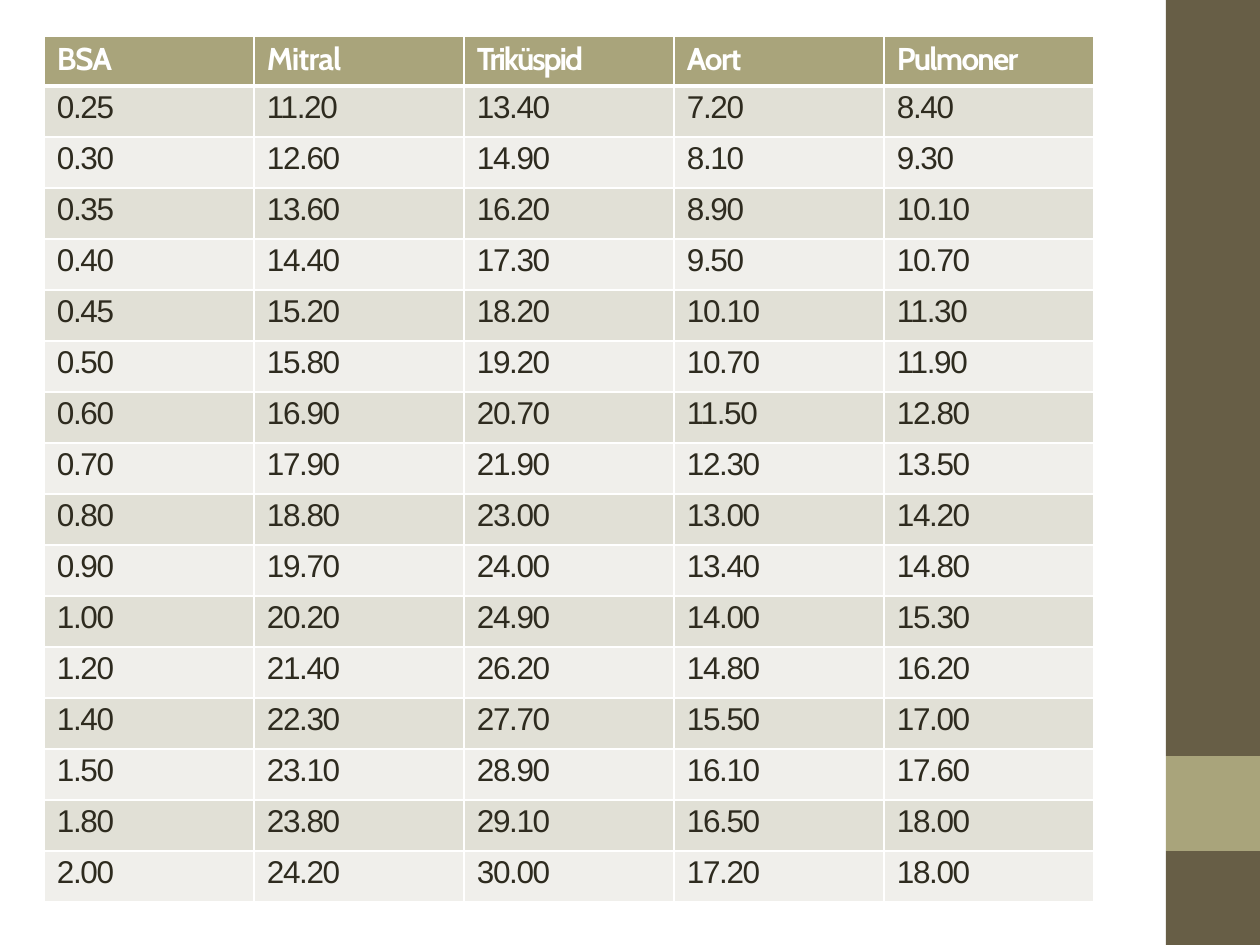
"""Build a slide with a table of valve diameters by body surface area."""
from lxml.etree import SubElement
from pptx import Presentation
from pptx.dml.color import RGBColor
from pptx.enum.shapes import MSO_SHAPE as Shape
from pptx.oxml.ns import qn
from pptx.util import Emu, Pt

SCALE = 914400 / 126
WHITE, OLIVE, SAND, INK = "FFFFFF", "675E46", "A9A47B", "2E2B1F"
BANDS = ("E1E0D6", "F0EFEB")

HEADERS = [("BSA", -0.7), ("Mitral", -0.5), ("Triküspid", -1.2), ("Aort", -0.8), ("Pulmoner", -1)]
ROWS = [
    ("0.25", "11.20", "13.40", "7.20", "8.40"),
    ("0.30", "12.60", "14.90", "8.10", "9.30"),
    ("0.35", "13.60", "16.20", "8.90", "10.10"),
    ("0.40", "14.40", "17.30", "9.50", "10.70"),
    ("0.45", "15.20", "18.20", "10.10", "11.30"),
    ("0.50", "15.80", "19.20", "10.70", "11.90"),
    ("0.60", "16.90", "20.70", "11.50", "12.80"),
    ("0.70", "17.90", "21.90", "12.30", "13.50"),
    ("0.80", "18.80", "23.00", "13.00", "14.20"),
    ("0.90", "19.70", "24.00", "13.40", "14.80"),
    ("1.00", "20.20", "24.90", "14.00", "15.30"),
    ("1.20", "21.40", "26.20", "14.80", "16.20"),
    ("1.40", "22.30", "27.70", "15.50", "17.00"),
    ("1.50", "23.10", "28.90", "16.10", "17.60"),
    ("1.80", "23.80", "29.10", "16.50", "18.00"),
    ("2.00", "24.20", "30.00", "17.20", "18.00"),
]
SIDEBAR_LEFT, SIDEBAR_WIDTH = 1166, 94
SIDEBAR = [(0, 756, OLIVE), (851, 94, OLIVE), (756, 95, SAND)]
TABLE_LEFT, TABLE_TOP, COLUMN_WIDTH = 44, 36, 210
HEADER_HEIGHT, ROW_HEIGHT = 50, 51


def px(length):
    return Emu(round(length * SCALE))


def paint(fill, color):
    fill.solid()
    fill.fore_color.rgb = RGBColor.from_string(color)


def add_border(cell, side, points):
    line = SubElement(cell._tc.get_or_add_tcPr(), qn(f"a:ln{side}"), w=str(Pt(points)))
    SubElement(SubElement(line, qn("a:solidFill")), qn("a:srgbClr"), val=WHITE)


def write(cell, text, font="Arial", color=INK, bold=False, spacing=-0.8):
    cell.margin_left, cell.margin_top = px(13), px(4)
    cell.margin_right = cell.margin_bottom = 0
    span = cell.text_frame.paragraphs[0].add_run()
    span.text = text
    span.font.name, span.font.size, span.font.bold = font, Pt(18), bold
    span.font.color.rgb = RGBColor.from_string(color)
    span._r.get_or_add_rPr().set("spc", str(round(spacing * 100)))


def add_sidebar(page):
    for top, height, color in SIDEBAR:
        bar = page.shapes.add_shape(
            Shape.RECTANGLE, px(SIDEBAR_LEFT), px(top), px(SIDEBAR_WIDTH), px(height))
        bar.shadow.inherit = False
        bar.line.fill.background()
        paint(bar.fill, color)


def add_valve_table(page):
    heights = [HEADER_HEIGHT] + [ROW_HEIGHT] * len(ROWS)
    table = page.shapes.add_table(
        len(heights), len(HEADERS), px(TABLE_LEFT), px(TABLE_TOP),
        px(COLUMN_WIDTH * len(HEADERS)), px(sum(heights))).table
    table.horz_banding = False
    for column in table.columns:
        column.width = px(COLUMN_WIDTH)
    for row, height in zip(table.rows, heights):
        row.height = px(height)
    for col, (title, spacing) in enumerate(HEADERS):
        write(table.cell(0, col), title, font="Cabin", color=WHITE, bold=True, spacing=spacing)
        for row, values in enumerate(ROWS, 1):
            write(table.cell(row, col), values[col])
        for row in range(len(heights)):
            cell = table.cell(row, col)
            widths = {"L": 1, "R": 1, "T": 3 if row == 1 else 1, "B": 3 if row == 0 else 1}
            for side, points in widths.items():
                add_border(cell, side, points)
            paint(cell.fill, BANDS[(row - 1) % 2] if row else SAND)


def main():
    deck = Presentation()
    deck.slide_width, deck.slide_height = px(1260), px(945)
    page = deck.slides.add_slide(deck.slide_layouts[6])
    add_sidebar(page)
    add_valve_table(page)
    deck.save("out.pptx")


if __name__ == "__main__":
    main()
